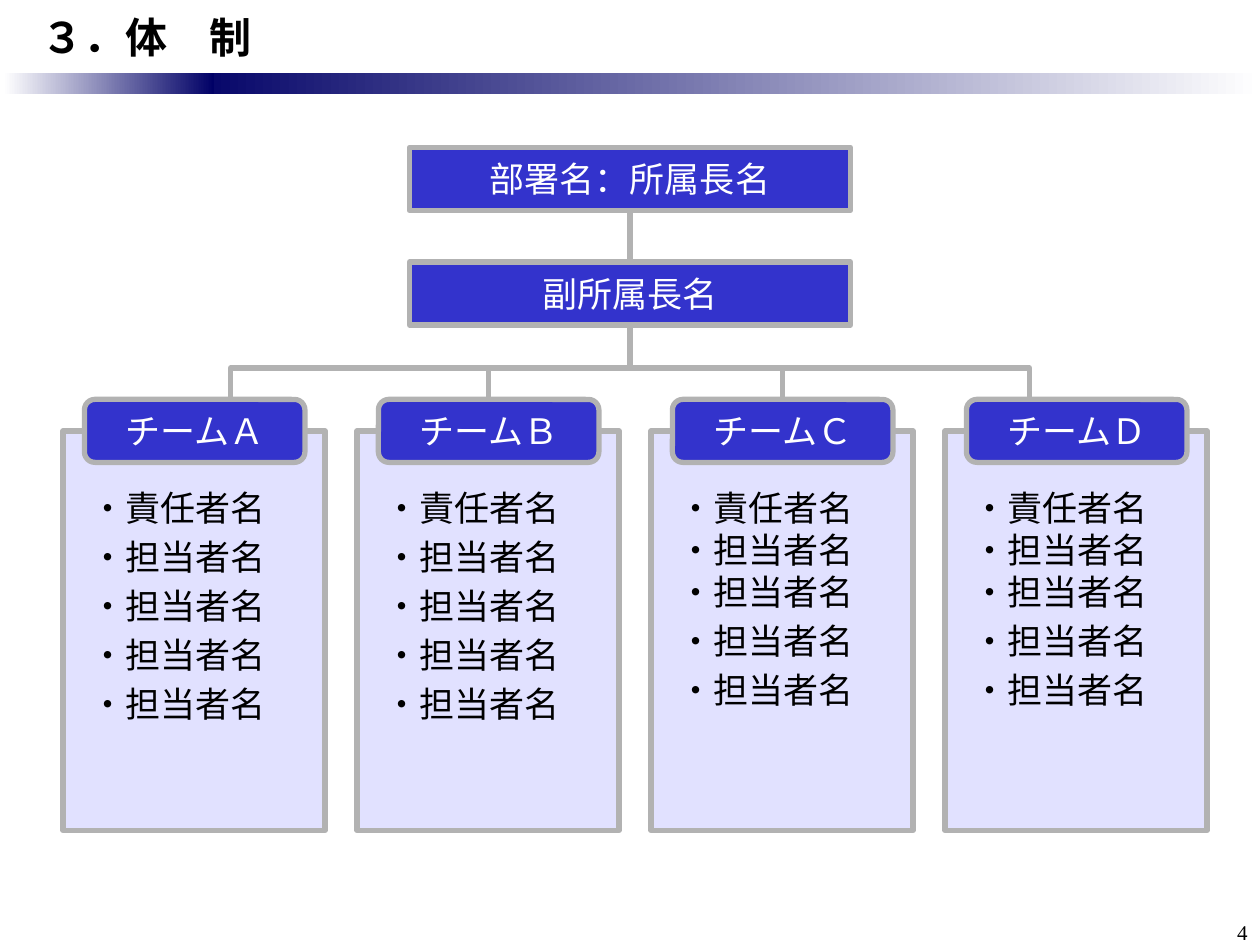
import pptx
import pptx.dml.color
import pptx.enum.shapes
import pptx.enum.text
import pptx.oxml.ns
import pptx.util
from lxml import etree

Inches = pptx.util.Inches
Pt = pptx.util.Pt
SHAPE = pptx.enum.shapes.MSO_SHAPE
ALIGN = pptx.enum.text.PP_ALIGN
ANCHOR = pptx.enum.text.MSO_ANCHOR
qn = pptx.oxml.ns.qn


def rgb(value):
    return pptx.dml.color.RGBColor.from_string(value)


class Chart:
    FONT = "Noto Sans CJK JP"
    NAVY, BLUE, PALE, GREY = "000066", "3333CC", "E1E1FF", "B2B2B2"
    BLACK, WHITE = "000000", "FFFFFF"

    def __init__(self, slide):
        self.s = slide

    def outline(self, sp):
        sp.line.color.rgb = rgb(self.GREY)
        sp.line.width = Pt(3)

    def set_text(self, sp, lines, size=20, color=BLACK, align=ALIGN.LEFT, bold=False,
                 font=FONT, anchor=ANCHOR.TOP, left=0.1, top=0.05, gaps=()):
        """Fill a shape with paragraphs; gaps lists the points after each one."""
        tf = sp.text_frame
        tf.word_wrap = True
        tf.vertical_anchor = anchor
        tf.margin_left, tf.margin_top = Inches(left), Inches(top)
        tf.text = "\n".join(lines)
        for p in tf.paragraphs:
            p.alignment = align
            p.font.size, p.font.bold, p.font.name = Pt(size), bold, font
            p.font.color.rgb = rgb(color)
            props = p._p.find(".//" + qn("a:defRPr"))
            etree.SubElement(props, qn("a:ea"), typeface=font)
        for p, gap in zip(tf.paragraphs, gaps):
            p.space_after = Pt(gap)

    def text(self, x, y, w, h, line, **style):
        sp = self.s.shapes.add_textbox(Inches(x), Inches(y), Inches(w), Inches(h))
        self.set_text(sp, [line], **style)

    def shape(self, kind, x, y, w, h):
        sp = self.s.shapes.add_shape(kind, Inches(x), Inches(y), Inches(w), Inches(h))
        sp.shadow.inherit = False
        return sp

    def fade(self, x, y, w, h, start, end):
        sp = self.shape(SHAPE.RECTANGLE, x, y, w, h)
        sp.line.fill.background()
        sp.fill.gradient()
        sp.fill.gradient_angle = 0
        for stop, color in zip(sp.fill.gradient_stops, (start, end)):
            stop.color.rgb = rgb(color)

    def box(self, x, y, w, h, fill, lines, kind=SHAPE.RECTANGLE, **style):
        sp = self.shape(kind, x, y, w, h)
        sp.fill.solid()
        sp.fill.fore_color.rgb = rgb(fill)
        self.outline(sp)
        self.set_text(sp, lines, **style)

    def label(self, x, y, w, name, kind=SHAPE.RECTANGLE):
        self.box(x, y, w, 0.5, self.BLUE, [name], kind, color=self.WHITE,
                 align=ALIGN.CENTER, anchor=ANCHOR.MIDDLE)

    def drop(self, x, top, bottom):
        """Draw a vertical connecting line."""
        sp = self.s.shapes.add_connector(pptx.enum.shapes.MSO_CONNECTOR.STRAIGHT,
                                         Inches(x), Inches(top), Inches(x), Inches(bottom))
        self.outline(sp)
        etree.SubElement(sp._element.spPr, qn("a:effectLst"))

    def bracket(self, left, right, top, bottom):
        points = [(Inches(x), Inches(y)) for x, y in
                  ((left, bottom), (left, top), (right, top), (right, bottom))]
        builder = self.s.shapes.build_freeform(*points[0])
        builder.add_line_segments(points[1:], close=False)
        sp = builder.convert_to_shape()
        sp.shadow.inherit = False
        sp.fill.background()
        self.outline(sp)


def main():
    prs = pptx.Presentation()
    prs.slide_width, prs.slide_height = Inches(10), Inches(7.5)
    c = Chart(prs.slides.add_slide(prs.slide_layouts[6]))

    c.fade(1.42, 0.58, 8.58, 0.17, c.NAVY, c.WHITE)
    c.fade(0.03, 0.58, 1.67, 0.17, c.WHITE, c.NAVY)
    c.text(0, 0, 10, 0.58, "３．体　制", size=24, bold=True, anchor=ANCHOR.MIDDLE, left=0.33)
    c.text(9.42, 7.25, 0.58, 0.25, "4", size=12, font="Times New Roman", align=ALIGN.RIGHT)

    branch_y = 2.92
    for x in (3.88, 6.21):
        c.drop(x, branch_y, 3.5)
    c.bracket(1.83, 8.17, branch_y, 3.42)
    c.drop(5, 1.5, branch_y)
    c.label(3.25, 1.17, 3.5, "部署名：所属長名")
    c.label(3.25, 2.08, 3.5, "副所属長名")

    members = ["・責任者名"] + ["・担当者名"] * 4
    even, tight_start = (4,) * 5, (0, 0, 4, 4, 4)
    teams = [("Ａ", even), ("Ｂ", even), ("Ｃ", tight_start), ("Ｄ", tight_start)]
    for i, (team, gaps) in enumerate(teams):
        x = 0.5 + i * 7 / 3
        c.box(x, 3.42, 2.08, 3.17, c.PALE, members, left=0.22, top=0.44, gaps=gaps)
        c.label(x + 0.17, 3.17, 1.75, "チーム" + team, SHAPE.ROUNDED_RECTANGLE)

    prs.save("out.pptx")


if __name__ == "__main__":
    main()
